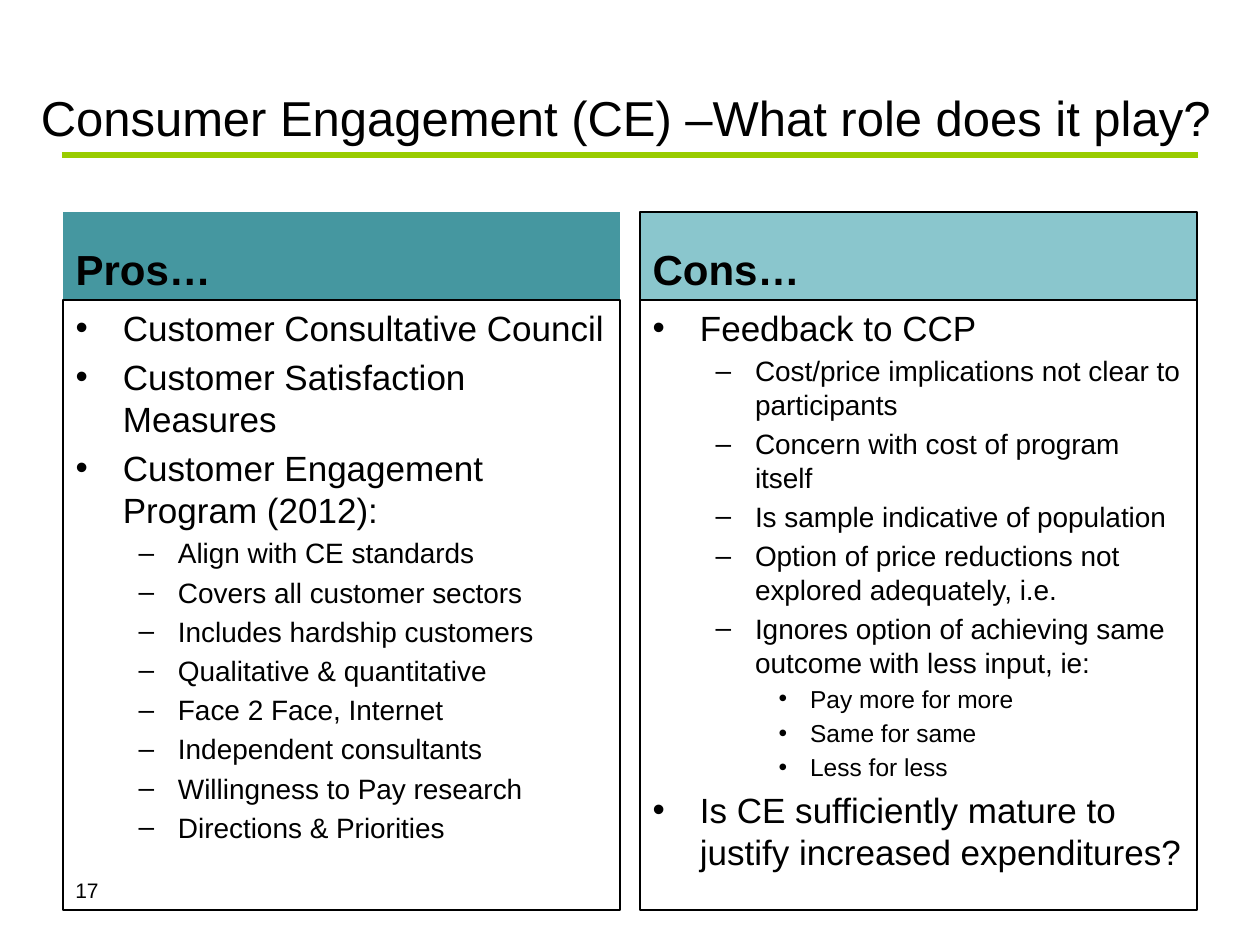
import pptx
import pptx.util
import pptx.dml.color
import pptx.enum.shapes
import pptx.enum.text
import pptx.oxml.ns
import lxml.etree

EMU_PER_PX = 914400 / 126
COMPARISON_LAYOUT = 5 - 1
LEVEL_SIZES = [20, 16, 14]
ANCHOR = pptx.enum.text.MSO_ANCHOR

PROS = [
    (0, "Customer Consultative Council"),
    (0, "Customer Satisfaction Measures"),
    (0, "Customer Engagement Program (2012):"),
    (1, "Align with CE standards"),
    (1, "Covers all customer sectors"),
    (1, "Includes hardship customers"),
    (1, "Qualitative & quantitative"),
    (1, "Face 2 Face, Internet"),
    (1, "Independent consultants"),
    (1, "Willingness to Pay research"),
    (1, "Directions & Priorities"),
]
CONS = [
    (0, "Feedback to CCP"),
    (1, "Cost/price implications not clear to participants"),
    (1, "Concern with cost of program itself"),
    (1, "Is sample indicative of population"),
    (1, "Option of price reductions not explored adequately, i.e."),
    (1, "Ignores option of achieving same outcome with less input, ie:"),
    (2, "Pay more for more"),
    (2, "Same for same"),
    (2, "Less for less"),
    (0, "Is CE sufficiently mature to justify increased expenditures?"),
]


def px(length):
    return pptx.util.Emu(round(length * EMU_PER_PX))


def color(hex_string):
    return pptx.dml.color.RGBColor.from_string(hex_string)


def apply(target, values):
    for name, value in values.items():
        setattr(target, name, value)


def place(shape, left, top, width, height):
    apply(shape, {"left": px(left), "top": px(top), "width": px(width), "height": px(height)})


def draw_outline(shape):
    shape.line.color.rgb = color("000000")
    shape.line.width = pptx.util.Pt(0.75)


def write_paragraph(paragraph, text, size, bold=False):
    run = paragraph.add_run()
    run.text = text
    apply(run.font, {"name": "Arial", "size": pptx.util.Pt(size), "bold": bold})
    run.font.color.rgb = color("000000")


def set_frame(shape, anchor):
    apply(shape.text_frame, {
        "word_wrap": True,
        "auto_size": pptx.enum.text.MSO_AUTO_SIZE.NONE,
        "vertical_anchor": anchor,
    })


def build_title(slide, left, top, width, height):
    title = slide.shapes.title
    place(title, left, top, width, height)
    set_frame(title, ANCHOR.MIDDLE)
    apply(title.text_frame, {"margin_left": 0, "margin_right": 0})
    paragraph = title.text_frame.paragraphs[0]
    paragraph.alignment = pptx.enum.text.PP_ALIGN.CENTER
    write_paragraph(paragraph, "Consumer Engagement (CE) –What role does it play?", 28)


def build_rule(slide, left, top, width):
    rule = slide.shapes.add_connector(
        pptx.enum.shapes.MSO_CONNECTOR.STRAIGHT, px(left), px(top), px(left + width), px(top))
    rule.line.color.rgb = color("99CC00")
    rule.line.width = pptx.util.Pt(3)
    lxml.etree.SubElement(rule._element.spPr, pptx.oxml.ns.qn("a:effectLst"))


def build_column(header, body, box, heading, fill, items, header_outlined):
    left, top, width, height = box
    header_height = 88

    place(header, left, top, width, header_height)
    set_frame(header, ANCHOR.BOTTOM)
    header.fill.solid()
    header.fill.fore_color.rgb = color(fill)
    if header_outlined:
        draw_outline(header)
    write_paragraph(header.text_frame.paragraphs[0], heading, 24, True)

    place(body, left, top + header_height, width, height - header_height)
    set_frame(body, ANCHOR.TOP)
    draw_outline(body)
    for index, (level, text) in enumerate(items):
        frame = body.text_frame
        paragraph = frame.add_paragraph() if index else frame.paragraphs[0]
        paragraph.level = level
        write_paragraph(paragraph, text, LEVEL_SIZES[level])


def build_page_number(slide, left, top, width, height):
    text_box = slide.shapes.add_textbox(px(left), px(top), px(width), px(height))
    set_frame(text_box, ANCHOR.BOTTOM)
    text_box.text_frame.margin_bottom = px(10)
    write_paragraph(text_box.text_frame.paragraphs[0], "17", 12)


def main():
    presentation = pptx.Presentation()
    apply(presentation, {"slide_width": px(1260), "slide_height": px(945)})
    slide = presentation.slides.add_slide(presentation.slide_layouts[COMPARISON_LAYOUT])
    _, pros_header, pros_body, cons_header, cons_body = slide.placeholders

    build_rule(slide, 62, 155, 1136)
    build_title(slide, 25, 38, 1201, 158)
    build_column(pros_header, pros_body, (63, 212, 557, 698), "Pros…", "4597A0", PROS, False)
    build_column(cons_header, cons_body, (640, 212, 557, 698), "Cons…", "8AC6CD", CONS, True)
    build_page_number(slide, 63, 848, 101, 65)
    presentation.save("out.pptx")


if __name__ == "__main__":
    main()
